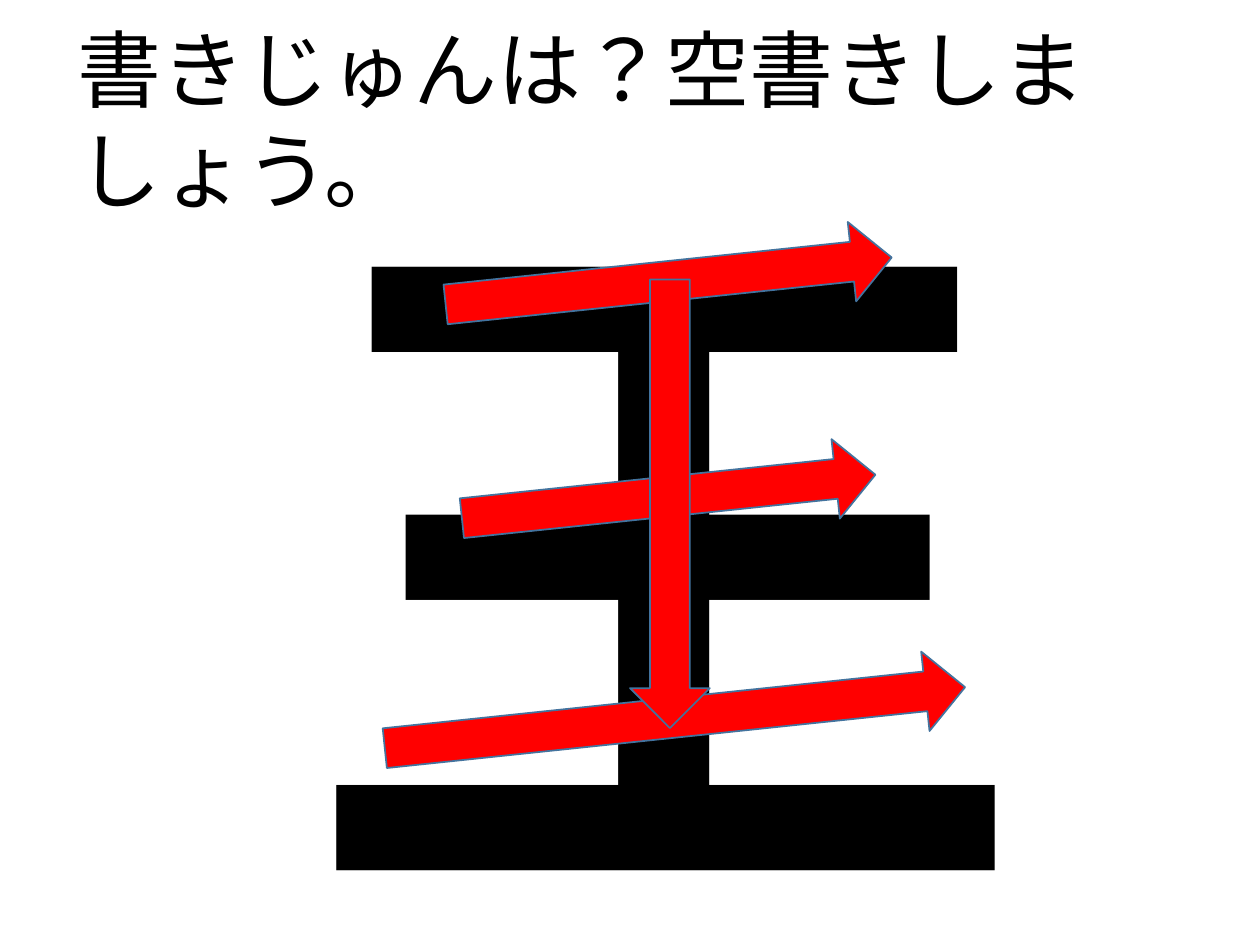
from pptx import Presentation
from pptx import util as u
from pptx.dml import color
from pptx.enum import lang, shapes, text

Pt = u.Pt
COLORS = {"ink": "000000", "arrow": "FF0000", "outline": "43739E"}
FONT = "Lato"

prs = Presentation()
prs.slide_width, prs.slide_height = Pt(720), Pt(540)
s = prs.slides.add_slide(prs.slide_layouts[6])


def add_text(words, box, size, bold, wrap):
    tf = s.shapes.add_textbox(*map(Pt, box)).text_frame
    tf.word_wrap = wrap
    tf.auto_size = text.MSO_AUTO_SIZE.SHAPE_TO_FIT_TEXT
    p = tf.paragraphs[0]
    p.text = words
    f = p.font
    f.name, f.size, f.bold = FONT, Pt(size), bold
    f.language_id = lang.MSO_LANGUAGE_ID.JAPANESE
    f.color.rgb = color.RGBColor.from_string(COLORS["ink"])


# Large character
add_text("王", (166.3, 61.9, 433.4, 507.6), 413, True, False)

# Stroke arrows: three rising to the right, then the vertical one
ARROW_WIDTH = 45.6
strokes = [  # left, top, length, rotation
    (359.3, 32.4, 256.3, 264),
    (359.3, 164.9, 237.6, 264),
    (362.9, 243.4, 333.4, 264),
    (360, 159.8, 256.3, 0),
]
for left, top, length, rotation in strokes:
    sp = s.shapes.add_shape(shapes.MSO_SHAPE.DOWN_ARROW,
                            Pt(left), Pt(top), Pt(ARROW_WIDTH), Pt(length))
    sp.rotation = rotation
    sp.shadow.inherit = False
    sp.fill.solid()
    sp.fill.fore_color.rgb = color.RGBColor.from_string(COLORS["arrow"])
    sp.line.color.rgb = color.RGBColor.from_string(COLORS["outline"])
    sp.line.width = Pt(1)

# Question
add_text("書きじゅんは？空書きしましょう。", (37.4, 6.5, 646.6, 65.5), 48, False, True)

prs.save("out.pptx")
